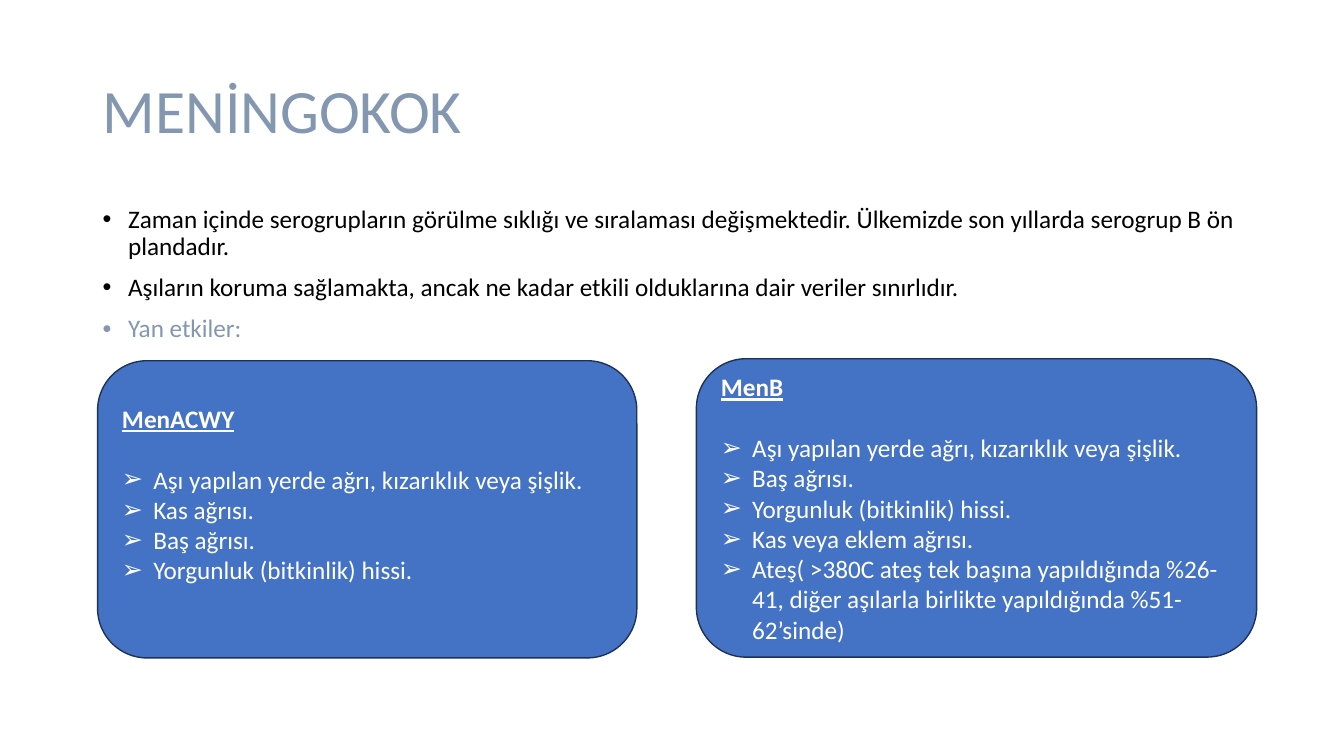
from lxml import etree
from pptx import Presentation
from pptx import util as u
from pptx.dml.color import RGBColor
from pptx.enum import shapes, text
from pptx.oxml.ns import qn

BLACK = RGBColor(0, 0, 0)
WHITE = RGBColor(0xFF, 0xFF, 0xFF)
STEEL = RGBColor(0x84, 0x97, 0xB0)
BLUE = RGBColor(0x44, 0x72, 0xC4)
NAVY = RGBColor(0x1E, 0x32, 0x56)


class Deck:
    face = "Calibri"
    size = 18

    def __init__(self):
        self.prs = Presentation()
        self.prs.slide_width = u.Cm(33.87)
        self.prs.slide_height = u.Cm(19.05)
        self.slide = self.prs.slides.add_slide(self.prs.slide_layouts[6])

    def line(self, frame, words, color, size=size, mark=None, indent=0):
        """Add one paragraph, with a hanging bullet if mark is given."""
        first = frame.paragraphs[0]
        par = frame.add_paragraph() if first.runs else first
        par.add_run().text = words
        par.alignment = text.PP_ALIGN.LEFT
        if mark:
            props = par._p.get_or_add_pPr()
            props.set("marL", str(u.Cm(indent)))
            props.set("indent", str(-u.Cm(indent)))
            etree.SubElement(props, qn("a:buFont"), typeface="Arial")
            etree.SubElement(props, qn("a:buChar"), char=mark)
        par.font.name = self.face
        par.font.size = u.Pt(size)
        par.font.color.rgb = color
        return par

    def box(self, left, top, width, height, anchor):
        frame = self.slide.shapes.add_textbox(
            *map(u.Cm, (left, top, width, height))).text_frame
        frame.word_wrap = True
        frame.vertical_anchor = anchor
        return frame

    def title(self, words, *place):
        frame = self.box(*place, text.MSO_ANCHOR.MIDDLE)
        self.line(frame, words, STEEL, 44).line_spacing = 0.9

    def points(self, items, *place):
        frame = self.box(*place, text.MSO_ANCHOR.TOP)
        for i, (words, color) in enumerate(items):
            par = self.line(frame, words, color, mark="•", indent=0.64)
            par.line_spacing = 0.9
            if i:
                par.space_before = u.Pt(10)

    def card(self, head, items, base, *place):
        """Rounded card; base is the bottom margin that lifts its text."""
        shape = self.slide.shapes.add_shape(
            shapes.MSO_SHAPE.ROUNDED_RECTANGLE, *map(u.Cm, place))
        shape.shadow.inherit = False
        shape.fill.solid()
        shape.fill.fore_color.rgb = BLUE
        shape.line.color.rgb = NAVY
        shape.line.width = u.Pt(1)
        frame = shape.text_frame
        frame.word_wrap = True
        frame.vertical_anchor = text.MSO_ANCHOR.MIDDLE
        frame.margin_bottom = u.Cm(base)
        par = self.line(frame, head, WHITE)
        par.font.bold = par.font.underline = True
        par.space_after = u.Pt(22)
        for words in items:
            self.line(frame, words, WHITE, mark="➢", indent=0.79)


def main():
    deck = Deck()

    # Title and main points
    deck.title("MENİNGOKOK", 2.34, 1.02, 29.21, 3.68)
    deck.points([
        ("Zaman içinde serogrupların görülme sıklığı ve sıralaması "
         "değişmektedir. Ülkemizde son yıllarda serogrup B ön plandadır.", BLACK),
        ("Aşıların koruma sağlamakta, ancak ne kadar etkili olduklarına "
         "dair veriler sınırlıdır.", BLACK),
        ("Yan etkiler:", STEEL),
    ], 2.34, 5.08, 29.21, 12.09)

    # Side effects of each vaccine
    site = "Aşı yapılan yerde ağrı, kızarıklık veya şişlik."
    ache = "Baş ağrısı."
    tired = "Yorgunluk (bitkinlik) hissi."
    deck.card("MenACWY", [site, "Kas ağrısı.", ache, tired],
              0.9, 2.46, 9.09, 13.59, 7.49)
    deck.card("MenB", [
        site, ache, tired, "Kas veya eklem ağrısı.",
        "Ateş( >380C ateş tek başına yapıldığında %26-41, "
        "diğer aşılarla birlikte yapıldığında %51-62’sinde)",
    ], 0.13, 17.55, 9.04, 14.12, 7.52)

    deck.prs.save("out.pptx")


if __name__ == "__main__":
    main()
